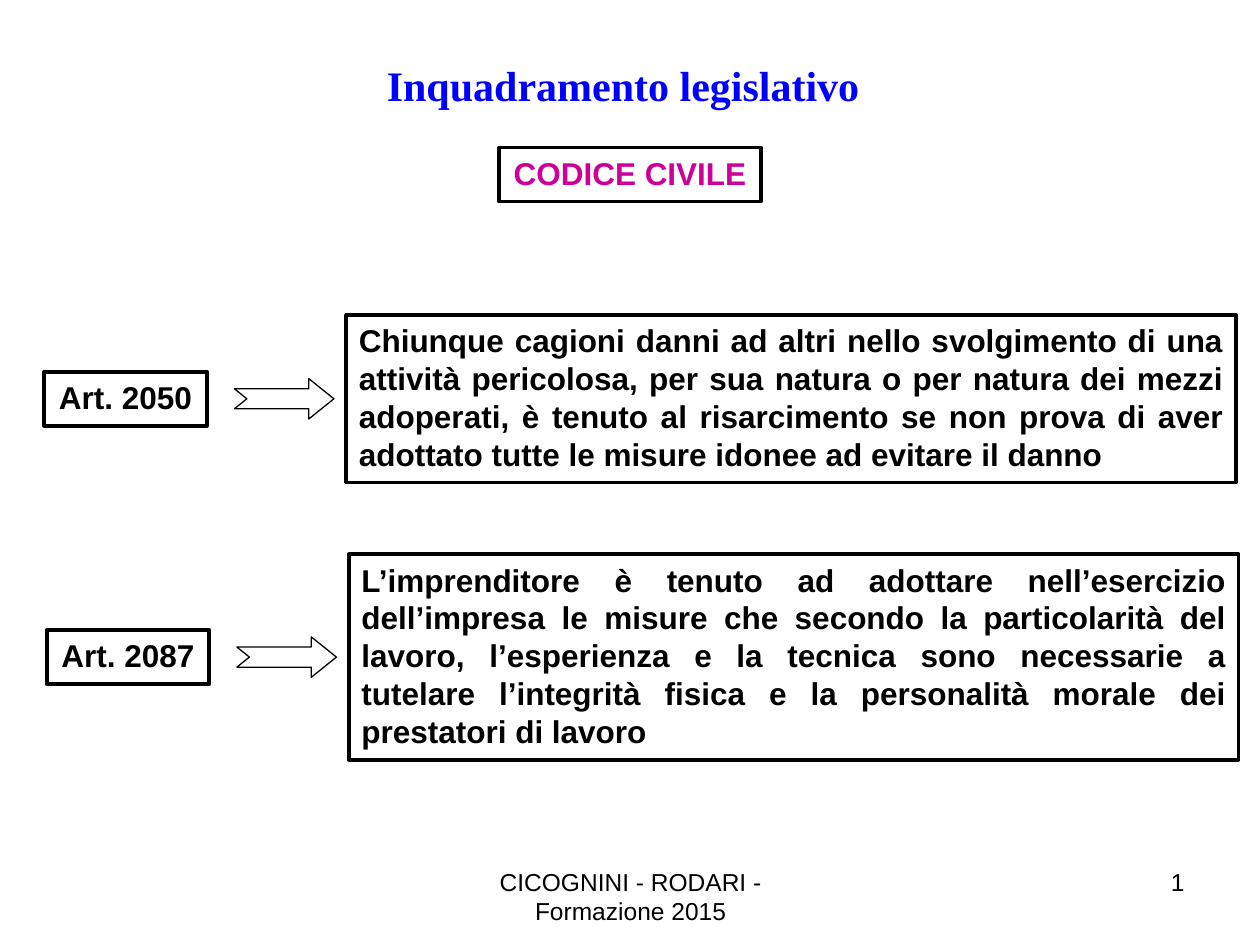
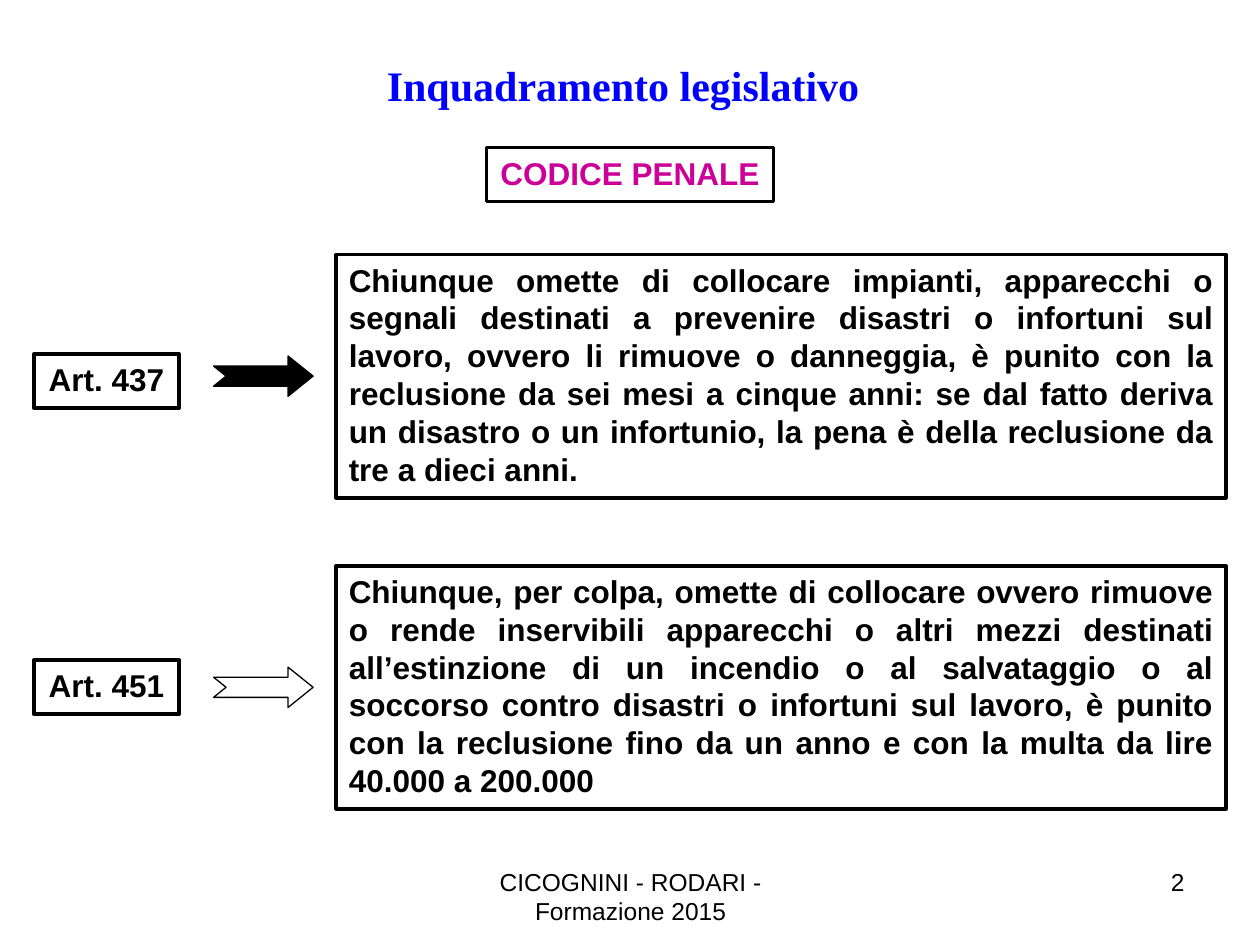
from lxml.etree import SubElement
from pptx import Presentation
from pptx.dml.color import RGBColor
from pptx.enum.shapes import MSO_SHAPE
from pptx.enum.text import MSO_ANCHOR, MSO_AUTO_SIZE, PP_ALIGN
from pptx.oxml.ns import qn
from pptx.util import Inches, Pt

COLORS = {"text": "000000", "title": "0000FF", "code": "CC0099", "paper": "FFFFFF"}
TITLE = "Inquadramento legislativo"
FOOTER = "CICOGNINI - RODARI - Formazione 2015"

# The slide is a grid of 100 columns by 75 rows of square cells
COLUMNS, ROWS = 100, 75
CELL = Inches(0.1)
LINE_ROWS = 3        # height of one line of 18 pt text
PADDING_ROWS = 1.3   # insets and outline of a frame
TAG_ROWS = LINE_ROWS + PADDING_ROWS
ARTICLE_COLUMNS = 94.6
TEXT_COLUMNS = 70.6
ARROW_COLUMNS, ARROW_ROWS = 7.9, 3.2

# Articles: tag, tag drop, row box (left, top), lines, arrow fill, text
SLIDES = [
    {"number": 2, "code": "CODICE CIVILE", "code_columns": 20.8,
     "tag_columns": 12.9, "arrow_lead": 8.9,
     "articles": [
         ("Art. 2050", 0, (3.5, 25), 4, "paper",
          "Chiunque cagioni danni ad altri nello svolgimento di una attività "
          "pericolosa, per sua natura o per natura dei mezzi adoperati, è tenuto al "
          "risarcimento se non prova di aver adottato tutte le misure idonee ad "
          "evitare il danno"),
         ("Art. 2087", 0, (3.7, 44), 5, "paper",
          "L’imprenditore è tenuto ad adottare nell’esercizio dell’impresa le misure "
          "che secondo la particolarità del lavoro, l’esperienza e la tecnica sono "
          "necessarie a tutelare l’integrità fisica e la personalità morale dei "
          "prestatori di lavoro"),
     ]},
    {"number": 3, "code": "CODICE PENALE", "code_columns": 22.8,
     "tag_columns": 11.5, "arrow_lead": 9.75,
     "articles": [
         ("Art. 437", 0.4, (2.7, 20.2), 6, "text",
          "Chiunque omette di collocare impianti, apparecchi o segnali destinati a "
          "prevenire disastri o infortuni sul lavoro, ovvero li rimuove o danneggia, "
          "è punito con la reclusione da sei mesi a cinque anni: se dal fatto deriva "
          "un disastro o un infortunio, la pena è della reclusione da tre a dieci anni."),
         ("Art. 451", 0, (2.7, 44.9), 6, "paper",
          "Chiunque, per colpa, omette di collocare ovvero rimuove o rende "
          "inservibili apparecchi o altri mezzi destinati all’estinzione di un "
          "incendio o al salvataggio o al soccorso contro disastri o infortuni sul "
          "lavoro, è punito con la reclusione fino da un anno e con la multa da lire "
          "40.000 a 200.000"),
     ]},
]


def color(name):
    return RGBColor.from_string(COLORS[name])


def cells(*lengths):
    return [round(length * CELL) for length in lengths]


def style(paragraph, size, name="text", font="Arial", bold=False,
          alignment=PP_ALIGN.CENTER):
    paragraph.alignment = alignment
    paragraph.font.name = font
    paragraph.font.size = Pt(size)
    paragraph.font.bold = bold
    paragraph.font.color.rgb = color(name)


def add_frame(slide, box, text, name="text", line=2.25, justified=False):
    """Outlined box with bold text; only justified text wraps."""
    shape = slide.shapes.add_shape(MSO_SHAPE.RECTANGLE, *cells(*box))
    shape.shadow.inherit = False
    shape.fill.background()
    shape.line.color.rgb = color("text")
    shape.line.width = Pt(line)
    frame = shape.text_frame
    frame.text = text
    frame.word_wrap = justified
    frame.auto_size = MSO_AUTO_SIZE.SHAPE_TO_FIT_TEXT
    frame.vertical_anchor = MSO_ANCHOR.TOP
    alignment = PP_ALIGN.JUSTIFY if justified else PP_ALIGN.CENTER
    style(frame.paragraphs[0], 18, name, bold=True, alignment=alignment)


def add_arrow(slide, box, fill):
    shape = slide.shapes.add_shape(MSO_SHAPE.NOTCHED_RIGHT_ARROW, *cells(*box))
    shape.shadow.inherit = False
    shape.adjustments[0] = 0.5
    shape.adjustments[1] = 0.622
    shape.fill.solid()
    shape.fill.fore_color.rgb = color(fill)
    shape.line.color.rgb = color("text")
    shape.line.width = Pt(0.75)


def add_title(slide, box):
    title = slide.shapes.title
    title.left, title.top, title.width, title.height = cells(*box)
    title.text_frame.text = TITLE
    title.text_frame.vertical_anchor = MSO_ANCHOR.TOP
    style(title.text_frame.paragraphs[0], 24, "title", "Times New Roman", True)


def add_footer_paragraph(slide, box, alignment):
    frame = slide.shapes.add_textbox(*cells(*box)).text_frame
    frame.word_wrap = True
    paragraph = frame.paragraphs[0]
    style(paragraph, 14, alignment=alignment)
    return paragraph


def add_footer(slide, number, top, height):
    paragraph = add_footer_paragraph(slide, (34.2, top, 31.7, height), PP_ALIGN.CENTER)
    paragraph.add_run().text = FOOTER

    # The page number is a live field
    paragraph = add_footer_paragraph(slide, (71.7, top, 23.3, height), PP_ALIGN.RIGHT)
    run = paragraph.add_run()
    run.text = str(number)
    run.font.size = Pt(14)
    run.font.name = "Arial"
    run.font.color.rgb = color("text")
    field = SubElement(paragraph._p, qn("a:fld"), type="slidenum",
                       id="{B6F15528-21DE-4FAA-801E-634DDDAF4B2B}")
    field.extend(list(run._r))
    paragraph._p.remove(run._r)


def add_article(slide, box, tag, tag_columns, tag_drop, arrow_lead, fill, text):
    """Tag, arrow and wording, centred on the middle of the row box."""
    left, top, width, height = box
    middle = top + height / 2
    text_left = left + width - TEXT_COLUMNS
    add_arrow(slide, (text_left - arrow_lead, middle - ARROW_ROWS / 2,
                      ARROW_COLUMNS, ARROW_ROWS), fill)
    add_frame(slide, (left, middle - TAG_ROWS / 2 + tag_drop, tag_columns, TAG_ROWS), tag)
    add_frame(slide, (text_left, top, TEXT_COLUMNS, height), text, justified=True)


def add_code_slide(presentation, content):
    slide = presentation.slides.add_slide(presentation.slide_layouts[5])
    add_title(slide, (15.2, 4.2, 68.5, 5))
    add_footer(slide, content["number"], 68.3, 5.2)
    code_columns = content["code_columns"]
    add_frame(slide, ((COLUMNS - code_columns) / 2, 11.7, code_columns, TAG_ROWS),
              content["code"], "code", line=2)
    for tag, tag_drop, (left, top), lines, fill, text in content["articles"]:
        box = (left, top, ARTICLE_COLUMNS, lines * LINE_ROWS + PADDING_ROWS)
        add_article(slide, box, tag, content["tag_columns"], tag_drop,
                    content["arrow_lead"], fill, text)


def main():
    presentation = Presentation()
    presentation.slide_width, presentation.slide_height = cells(COLUMNS, ROWS)
    for content in SLIDES:
        add_code_slide(presentation, content)
    presentation.save("out.pptx")


if __name__ == "__main__":
    main()
